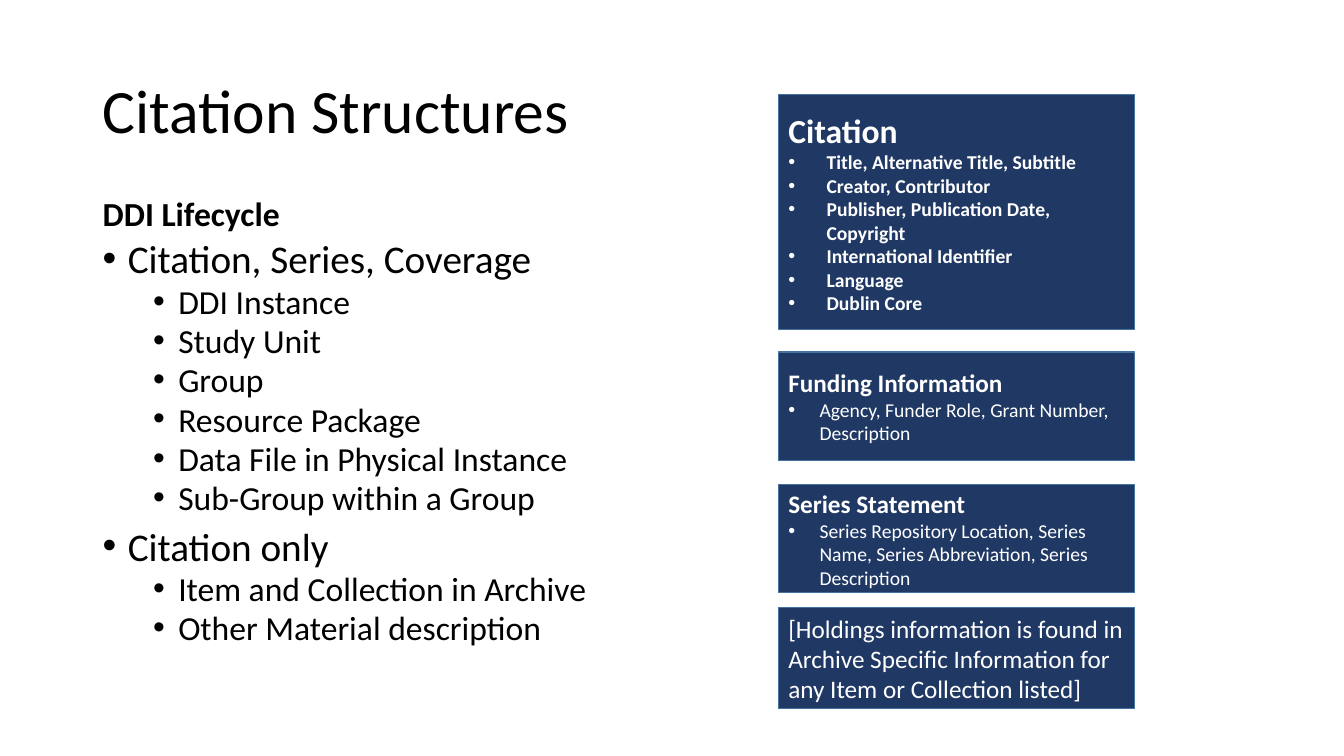
from lxml import etree
from pptx import Presentation
from pptx.dml.color import RGBColor
from pptx.enum.shapes import MSO_SHAPE as Preset
from pptx.enum.text import MSO_ANCHOR as Anchor, PP_ALIGN as Align
from pptx.oxml.ns import qn
from pptx.util import Inches, Pt

BLACK = RGBColor(0x00, 0x00, 0x00)
WHITE = RGBColor(0xFF, 0xFF, 0xFF)
NAVY = RGBColor(0x20, 0x38, 0x64)
STEEL = RGBColor(0x43, 0x73, 0x9E)
FONT = "Calibri"

# Content
TITLE = "Citation Structures"
HEADING = "DDI Lifecycle"
OUTLINE = [
    ("Citation, Series, Coverage", [
        "DDI Instance", "Study Unit", "Group", "Resource Package",
        "Data File in Physical Instance", "Sub-Group within a Group"]),
    ("Citation only", [
        "Item and Collection in Archive", "Other Material description"]),
]
# Cards: top, height, heading, heading format, bullets, bullet format
CARDS = [
    (0.94, 2.33, "Citation", {"size": 24, "bold": True},
     ["Title, Alternative Title, Subtitle", "Creator, Contributor",
      "Publisher, Publication Date, Copyright", "International Identifier",
      "Language", "Dublin Core"],
     {"size": 14, "bold": True, "indent": 0.38}),
    (3.49, 1.08, "Funding Information", {"size": 18, "bold": True},
     ["Agency, Funder Role, Grant Number, Description"],
     {"size": 14, "indent": 0.31}),
    (4.81, 1.07, "Series Statement", {"size": 18, "bold": True},
     ["Series Repository Location, Series Name, Series Abbreviation, "
      "Series Description"],
     {"size": 14, "indent": 0.31}),
    (6.03, 1, "[Holdings information is found in Archive Specific Information "
     "for any Item or Collection listed]", {"size": 18}, [], {}),
]

# Layout and formats
TITLE_AREA = (0.92, 0.4, 11.5, 1.45)
HEADING_AREA = (0.92, 1.84, 5.64, 0.53)
OUTLINE_AREA = (0.92, 2.37, 5.64, 4.4)
CARD_LEFT, CARD_WIDTH = 7.72, 3.53
TITLE_FORMAT = {"size": 44, "spacing": 0.9}
HEADING_FORMAT = {"size": 24, "bold": True, "spacing": 0.9, "before": 10}
TOPIC_FORMAT = {"size": 28, "indent": 0.25, "spacing": 0.8, "before": 10}
ITEM_FORMAT = {"size": 24, "margin": 0.75, "indent": 0.25, "spacing": 0.8,
               "before": 5, "level": 1}


def write(frame, lines, color, anchor):
    """Fill a text frame with (text, format) paragraphs."""
    frame.word_wrap = True
    frame.vertical_anchor = anchor
    for number, (text, form) in enumerate(lines):
        para = frame.paragraphs[0] if number == 0 else frame.add_paragraph()
        settings = {"alignment": Align.LEFT, "level": form.get("level", 0),
                    "line_spacing": form.get("spacing", 1.0),
                    "space_before": Pt(form.get("before", 0))}
        for name, value in settings.items():
            setattr(para, name, value)
        if "indent" in form:
            add_bullet(para, form["indent"], form.get("margin", form["indent"]))
        span = para.add_run()
        span.text = text
        for name, value in {"name": FONT, "size": Pt(form["size"]),
                            "bold": form.get("bold", False)}.items():
            setattr(span.font, name, value)
        span.font.color.rgb = color


def add_bullet(para, indent, margin):
    """Give a paragraph a round bullet with a hanging indent."""
    properties = para._p.get_or_add_pPr()
    properties.set("marL", str(Inches(margin)))
    properties.set("indent", str(-Inches(indent)))
    etree.SubElement(properties, qn("a:buFont")).set("typeface", "Arial")
    etree.SubElement(properties, qn("a:buChar")).set("char", "•")


def add_text(page, area, lines, anchor):
    box = page.shapes.add_textbox(*map(Inches, area))
    write(box.text_frame, lines, BLACK, anchor)


def add_card(page, top, height, lines):
    area = (CARD_LEFT, top, CARD_WIDTH, height)
    card = page.shapes.add_shape(Preset.RECTANGLE, *map(Inches, area))
    card.shadow.inherit = False
    card.fill.solid()
    card.fill.fore_color.rgb = NAVY
    card.line.color.rgb = STEEL
    card.line.width = Pt(1)
    write(card.text_frame, lines, WHITE, Anchor.MIDDLE)


def main():
    deck = Presentation()
    deck.slide_width, deck.slide_height = Inches(13.33), Inches(7.5)
    page = deck.slides.add_slide(deck.slide_layouts[6])

    # Title and outline on the left
    add_text(page, TITLE_AREA, [(TITLE, TITLE_FORMAT)], Anchor.MIDDLE)
    add_text(page, HEADING_AREA, [(HEADING, HEADING_FORMAT)], Anchor.BOTTOM)
    outline = []
    for topic, items in OUTLINE:
        outline.append((topic, TOPIC_FORMAT))
        outline += [(item, ITEM_FORMAT) for item in items]
    add_text(page, OUTLINE_AREA, outline, Anchor.TOP)

    # Cards on the right
    for top, height, heading, heading_format, bullets, bullet_format in CARDS:
        lines = [(heading, heading_format)]
        lines += [(bullet, bullet_format) for bullet in bullets]
        add_card(page, top, height, lines)

    deck.save("out.pptx")


if __name__ == "__main__":
    main()
